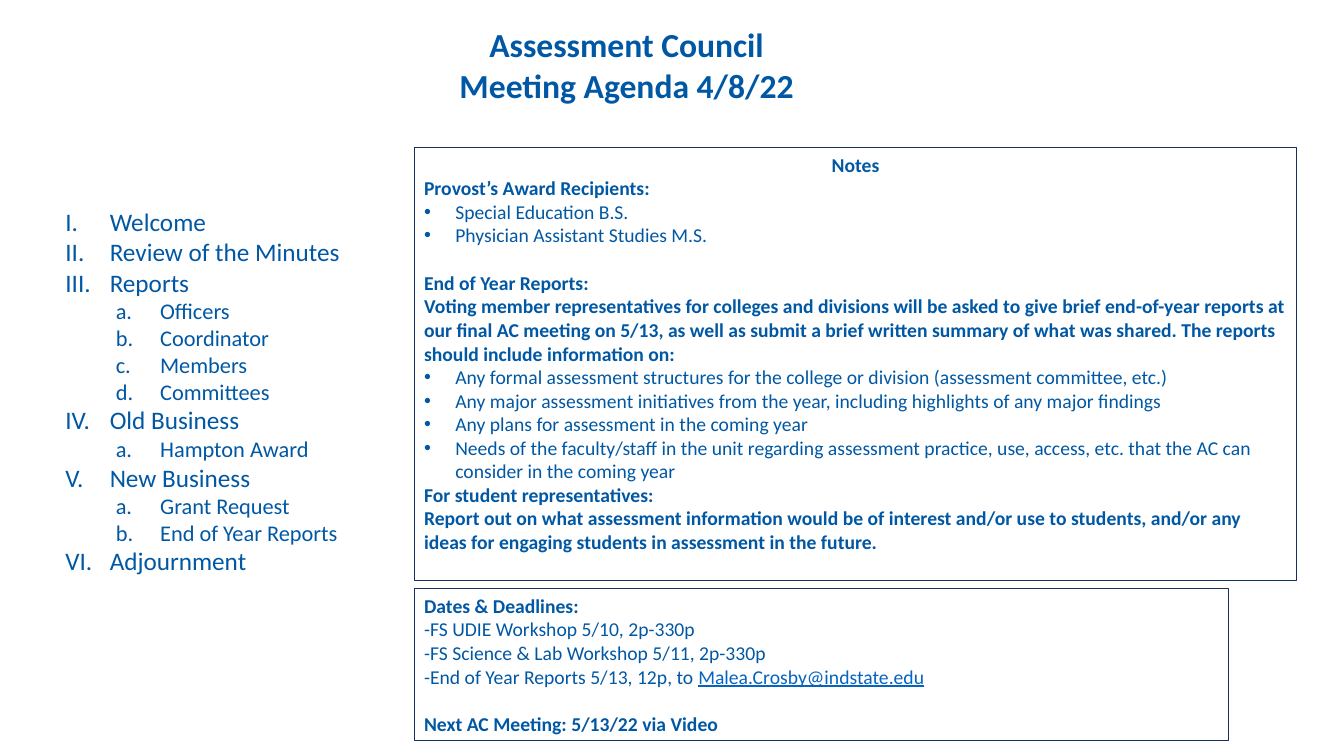
from lxml.etree import SubElement
from pptx import Presentation
from pptx.dml.color import RGBColor
from pptx.enum.shapes import MSO_SHAPE
from pptx.enum.text import MSO_ANCHOR, PP_ALIGN
from pptx.oxml.ns import qn
from pptx.util import Inches, Pt

COLORS = {"text": "0058A4", "border": "14325B", "link": "0563C1"}
COLUMNS, ROWS = 160, 90
BLANK_LINE = Pt(17.1)

HEADING = {"bold": True}
LINK = {"underline": True, "color": "link"}
MARKS = {
    "roman": ("a:buAutoNum", "type", "romanUcPeriod", 0, 0.44, 0.44),
    "letter": ("a:buAutoNum", "type", "alphaLcPeriod", 1, 0.94, 0.44),
    "dot": ("a:buChar", "char", "•", 0, 0.31, 0.31),
}

AGENDA = [
    ("Welcome", []),
    ("Review of the Minutes", []),
    ("Reports", ["Officers", "Coordinator", "Members", "Committees"]),
    ("Old Business", ["Hampton Award"]),
    ("New Business", ["Grant Request", "End of Year Reports"]),
    ("Adjournment", []),
]

NOTES = [
    ("Provost’s Award Recipients:", "heading"),
    ("Special Education B.S.", "item"),
    ("Physician Assistant Studies M.S.", "item"),
    ("End of Year Reports:", "section"),
    ("Voting member representatives for colleges and divisions will be asked to give "
     "brief end-of-year reports at our final AC meeting on 5/13, as well as submit a "
     "brief written summary of what was shared. The reports should include "
     "information on:", "heading"),
    ("Any formal assessment structures for the college or division "
     "(assessment committee, etc.)", "item"),
    ("Any major assessment initiatives from the year, including highlights of any "
     "major findings", "item"),
    ("Any plans for assessment in the coming year", "item"),
    ("Needs of the faculty/staff in the unit regarding assessment practice, use, "
     "access, etc. that the AC can consider in the coming year", "item"),
    ("For student representatives:", "heading"),
    ("Report out on what assessment information would be of interest and/or use to "
     "students, and/or any ideas for engaging students in assessment in the future.",
     "heading"),
]

DATES = [
    ("Dates & Deadlines:", "heading"),
    ("-FS UDIE Workshop 5/10, 2p-330p", "plain"),
    ("-FS Science & Lab Workshop 5/11, 2p-330p", "plain"),
    ("-End of Year Reports 5/13, 12p, to ", "plain"),
    ("Next AC Meeting: 5/13/22 via Video", "section"),
]

STYLES = {
    "plain": {},
    "heading": {"font": HEADING},
    "section": {"font": HEADING, "layout": {"space_before": BLANK_LINE}},
    "item": {"mark": "dot"},
}


class AgendaSlide:
    def __init__(self, deck):
        self.page = deck.slides.add_slide(deck.slide_layouts[6])
        self.column = deck.slide_width / COLUMNS
        self.row = deck.slide_height / ROWS

    def place(self, left, top, width, height):
        return (round(left * self.column), round(top * self.row),
                round(width * self.column), round(height * self.row))

    def prepare(self, box):
        frame = box.text_frame
        frame.word_wrap = True
        frame.vertical_anchor = MSO_ANCHOR.TOP
        return frame

    def text_box(self, *cells):
        return self.prepare(self.page.shapes.add_textbox(*self.place(*cells)))

    def framed_box(self, *cells):
        box = self.page.shapes.add_shape(MSO_SHAPE.RECTANGLE, *self.place(*cells))
        box.shadow.inherit = False
        box.fill.background()
        box.line.color.rgb = RGBColor.from_string(COLORS["border"])
        box.line.width = Pt(0.75)
        return self.prepare(box)

    def paragraph(self, frame, text, size, font=None, layout=None, mark=None):
        first = frame.paragraphs[0]
        para = frame.add_paragraph() if first.runs else first
        for name, value in {"alignment": PP_ALIGN.LEFT, **(layout or {})}.items():
            setattr(para, name, value)
        if mark:
            self.mark(para, mark)
        self.span(para, text, size, font)
        return para

    def mark(self, para, kind):
        tag, key, value, level, margin, hanging = MARKS[kind]
        para.level = level
        properties = para._p.get_or_add_pPr()
        properties.set("marL", str(Inches(margin)))
        properties.set("indent", str(-Inches(hanging)))
        SubElement(properties, qn("a:buFont")).set(
            "typeface", "Arial" if kind == "dot" else "+mj-lt")
        SubElement(properties, qn(tag)).set(key, value)

    def span(self, para, text, size, font=None):
        span = para.add_run()
        span.text = text
        values = {"name": "Calibri", "size": Pt(size), "bold": False,
                  "color": "text", **(font or {})}
        span.font.color.rgb = RGBColor.from_string(COLORS[values.pop("color")])
        for name, value in values.items():
            setattr(span.font, name, value)


def main():
    deck = Presentation()
    deck.slide_width, deck.slide_height = Inches(13.33), Inches(7.5)
    slide = AgendaSlide(deck)
    centered = {"alignment": PP_ALIGN.CENTER}

    agenda = slide.text_box(6.6, 24, 39.5, 45.6)
    for topic, subtopics in AGENDA:
        slide.paragraph(agenda, topic, 18, mark="roman")
        for subtopic in subtopics:
            slide.paragraph(agenda, subtopic, 16, mark="letter")

    title = slide.text_box(49.3, 2.3, 50.6, 10.9)
    for line in ("Assessment Council", "Meeting Agenda 4/8/22"):
        slide.paragraph(title, line, 24, HEADING, centered)

    notes = slide.framed_box(49.3, 17.6, 105.1, 51.5)
    slide.paragraph(notes, "Notes", 14, HEADING, centered)
    for text, style in NOTES:
        slide.paragraph(notes, text, 14, **STYLES[style])

    dates = slide.framed_box(49.3, 70.1, 97, 18.1)
    for text, style in DATES:
        para = slide.paragraph(dates, text, 14, **STYLES[style])
        if text.endswith("to "):
            slide.span(para, "Malea.Crosby@indstate.edu", 14, LINK)

    deck.save("out.pptx")


if __name__ == "__main__":
    main()
